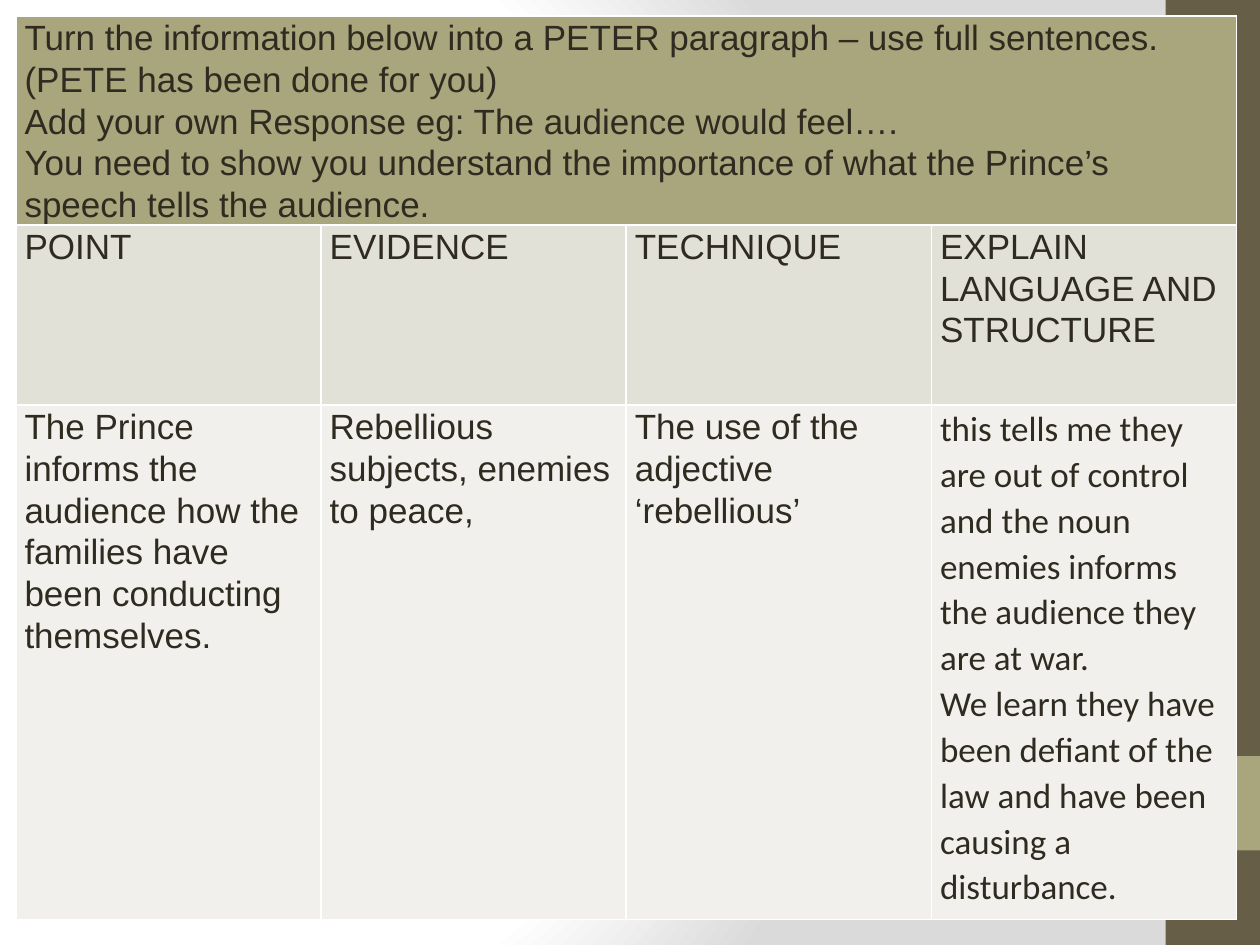
from pptx import Presentation
from pptx.dml.color import RGBColor
from pptx.enum.shapes import MSO_SHAPE as Shape
from pptx.oxml import parse_xml
from pptx.oxml.ns import nsdecls
from pptx.util import Pt

HEADING = [
    "Turn the information below into a PETER paragraph – use full sentences. (PETE has been done for you)",
    "Add your own Response eg: The audience would feel….",
    "You need to show you understand the importance of what the Prince’s speech tells the audience.",
]
COLUMNS = [
    ("POINT", ["The Prince informs the audience how the families have been conducting themselves."]),
    ("EVIDENCE", ["Rebellious subjects, enemies to peace,"]),
    ("TECHNIQUE", ["The use of the adjective ‘rebellious’"]),
    ("EXPLAIN LANGUAGE AND STRUCTURE", [
        "this tells me they are out of control and the noun enemies informs the audience they are at war.",
        "We learn they have been defiant of the law and have been causing a disturbance.",
    ]),
]
OLIVE, BROWN, INK = "A9A57C", "675E47", "2F2B20"
LABEL_FILL, BODY_FILL, BORDER = "E2E1D7", "F1F0EC", "FFFFFF"
SIDEBAR = [(0, 540, BROWN), (432, 54, OLIVE)]  # top, height, colour
TABLE_LEFT, TABLE_TOP, COLUMN_WIDTH = 9, 9.2, 174.4
ROW_HEIGHTS = [103, 103, 294]


def color(value):
    return RGBColor.from_string(value)


def set_background(page):
    """Give the page a radial gradient, white turning to grey."""
    stops = "".join(
        f'<a:gs pos="{position * 1000}"><a:srgbClr val="{shade}"/></a:gs>'
        for position, shade in [(0, "FFFFFF"), (75, "FFFFFF"), (100, "DADADA")]
    )
    page.element.cSld.insert(0, parse_xml(
        f'<p:bg {nsdecls("p", "a")}><p:bgPr><a:gradFill rotWithShape="1">'
        f'<a:gsLst>{stops}</a:gsLst><a:path path="circle">'
        '<a:fillToRect l="20000" t="50000" r="100000" b="50000"/></a:path>'
        '</a:gradFill><a:effectLst/></p:bgPr></p:bg>'
    ))


def add_sidebar(page):
    for top, height, shade in SIDEBAR:
        band = page.shapes.add_shape(Shape.RECTANGLE, Pt(666), Pt(top), Pt(54), Pt(height))
        band.shadow.inherit = False
        band.fill.solid()
        band.fill.fore_color.rgb = color(shade)
        band.line.fill.background()


def set_borders(cell):
    properties = cell._tc.get_or_add_tcPr()
    for index, side in enumerate(("lnL", "lnR", "lnT", "lnB")):
        properties.insert(index, parse_xml(
            f'<a:{side} {nsdecls("a")} w="{Pt(1)}"><a:solidFill>'
            f'<a:srgbClr val="{BORDER}"/></a:solidFill></a:{side}>'
        ))


def style_cell(cell, fill):
    cell.margin_left = cell.margin_right = Pt(5)
    cell.margin_top = cell.margin_bottom = 0
    cell.fill.solid()
    cell.fill.fore_color.rgb = color(fill)
    set_borders(cell)


def write_cell(cell, lines, font="Arial"):
    cell.text_frame.text = "\n".join(lines)
    for para in cell.text_frame.paragraphs:
        para.line_spacing = 1.07
        for span in para.runs:
            span.font.name = font
            span.font.size = Pt(20)
            span.font.bold = False
            span.font.color.rgb = color(INK)


def add_peter_table(page):
    table = page.shapes.add_table(
        len(ROW_HEIGHTS), len(COLUMNS), Pt(TABLE_LEFT), Pt(TABLE_TOP),
        Pt(COLUMN_WIDTH * len(COLUMNS)), Pt(sum(ROW_HEIGHTS)),
    ).table
    for column in table.columns:
        column.width = Pt(COLUMN_WIDTH)
    for row, height, fill in zip(table.rows, ROW_HEIGHTS, (OLIVE, LABEL_FILL, BODY_FILL)):
        row.height = Pt(height)
        for cell in row.cells:
            style_cell(cell, fill)

    table.cell(0, 0).merge(table.cell(0, len(COLUMNS) - 1))
    write_cell(table.cell(0, 0), HEADING)
    for index, (label, body) in enumerate(COLUMNS):
        write_cell(table.cell(1, index), [label])
        font = "Calibri" if index == len(COLUMNS) - 1 else "Arial"
        write_cell(table.cell(2, index), body, font)


def main():
    deck = Presentation()
    deck.slide_width, deck.slide_height = Pt(720), Pt(540)
    page = deck.slides.add_slide(deck.slide_layouts[6])
    set_background(page)
    add_sidebar(page)
    add_peter_table(page)
    deck.save("out.pptx")


if __name__ == "__main__":
    main()
